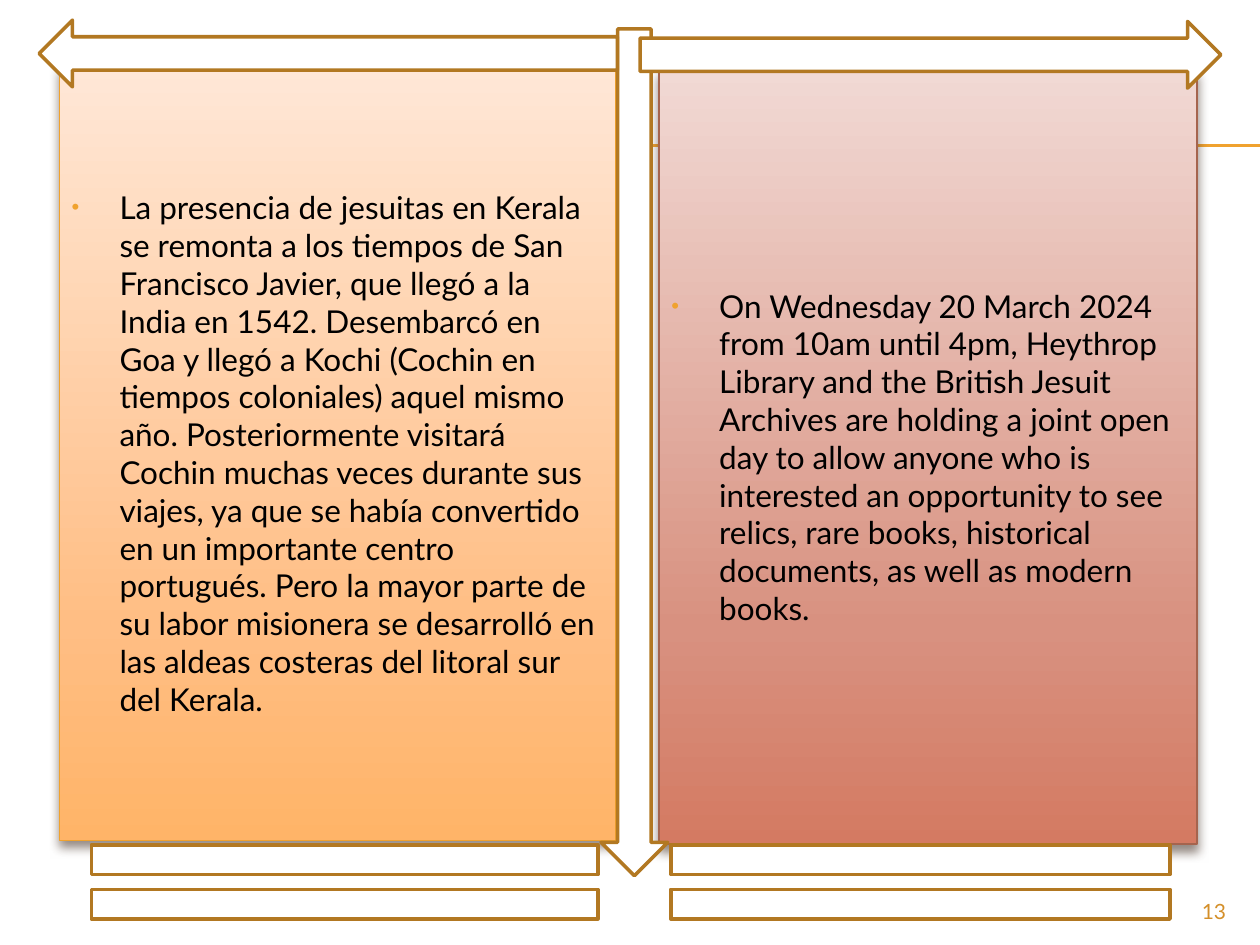
from dataclasses import dataclass

from lxml.etree import SubElement
from pptx import Presentation
from pptx.dml.color import RGBColor
from pptx.enum.shapes import MSO_CONNECTOR, MSO_SHAPE
from pptx.enum.text import MSO_ANCHOR, PP_ALIGN
from pptx.oxml import parse_xml
from pptx.oxml.ns import nsdecls, qn
from pptx.util import Inches, Pt

COLORS = {
    "white": "FFFFFF",
    "black": "000000",
    "gold": "F0A22E",
    "brown": "B27822",
    "rust": "A5644E",
    "shadow": "4E3B30",
    "number": "D48F29",
}
FONT = "Lato"


@dataclass
class Panel:
    left: float
    top: float
    width: float
    height: float
    gradient: tuple[str, str, str]
    line: str
    text: str


@dataclass
class Outline:
    preset: MSO_SHAPE
    left: float
    top: float
    width: float
    height: float


PANELS = [
    Panel(0.47, 0.52, 4.42, 6.15, ("FFE7D7", "FFBE84", "FFB468"), "gold",
          "La presencia de jesuitas en Kerala se remonta a los tiempos de San "
          "Francisco Javier, que llegó a la India en 1542. Desembarcó en Goa y "
          "llegó a Kochi (Cochin en tiempos coloniales) aquel mismo año. "
          "Posteriormente visitará Cochin muchas veces durante sus viajes, ya que "
          "se había convertido en un importante centro portugués. Pero la mayor "
          "parte de su labor misionera se desarrolló en las aldeas costeras del "
          "litoral sur del Kerala."),
    Panel(5.23, 0.55, 4.27, 6.15, ("F1D9D4", "D89180", "D47A62"), "rust",
          "On Wednesday 20 March 2024 from 10am until 4pm, Heythrop Library and "
          "the British Jesuit Archives are holding a joint open day to allow "
          "anyone who is interested an opportunity to see relics, rare books, "
          "historical documents, as well as modern books."),
]
OUTLINES = [
    Outline(MSO_SHAPE.DOWN_ARROW, 4.77, 0.23, 0.53, 6.72),
    Outline(MSO_SHAPE.RIGHT_ARROW, 5.08, 0.17, 4.61, 0.53),
    Outline(MSO_SHAPE.LEFT_ARROW, 0.31, 0.16, 4.59, 0.53),
    Outline(MSO_SHAPE.MATH_EQUAL, 0, 6.5, 5.47, 1),
    Outline(MSO_SHAPE.MATH_EQUAL, 4.61, 6.5, 5.39, 1),
]


def color(name: str) -> RGBColor:
    return RGBColor.from_string(COLORS[name])


def style_font(paragraph, size: float, name: str) -> None:
    for run in paragraph.runs:
        run.font.name = FONT
        run.font.size = Pt(size)
        run.font.color.rgb = color(name)


def add_rule(slide, top: float) -> None:
    rule = slide.shapes.add_connector(
        MSO_CONNECTOR.STRAIGHT, Inches(0.56), Inches(top), Inches(10), Inches(top))
    rule.line.color.rgb = color("gold")
    rule.line.width = Pt(0.75)
    SubElement(rule._element.spPr, qn("a:effectLst"))


def add_gradient(shape, gradient: tuple[str, str, str]) -> None:
    stops = "".join(
        f'<a:gs pos="{position * 1000}"><a:srgbClr val="{value}"/></a:gs>'
        for position, value in zip((0, 72, 100), gradient))
    fill = parse_xml(
        f'<a:gradFill {nsdecls("a")} rotWithShape="1"><a:gsLst>{stops}</a:gsLst>'
        '<a:lin ang="5400000" scaled="0"/></a:gradFill>')
    shape._element.spPr.find(qn("a:prstGeom")).addnext(fill)


def add_shadow(shape) -> None:
    shape._element.spPr.append(parse_xml(
        f'<a:effectLst {nsdecls("a")}><a:outerShdw blurRad="{Pt(6)}" dist="{Pt(4)}" '
        f'dir="5400000" rotWithShape="0"><a:srgbClr val="{COLORS["shadow"]}">'
        '<a:alpha val="60000"/></a:srgbClr></a:outerShdw></a:effectLst>'))


def add_bullet(paragraph) -> None:
    properties = paragraph._p.get_or_add_pPr()
    properties.set("marL", str(Inches(0.38)))
    properties.set("indent", str(-Inches(0.38)))
    bullet_color = SubElement(properties, qn("a:buClr"))
    SubElement(bullet_color, qn("a:srgbClr"), val=COLORS["gold"])
    SubElement(properties, qn("a:buSzPct"), val="70000")
    SubElement(properties, qn("a:buFont"), typeface="Arial")
    SubElement(properties, qn("a:buChar"), char="•")


def add_panel(slide, panel: Panel) -> None:
    shape = slide.shapes.add_shape(
        MSO_SHAPE.RECTANGLE, Inches(panel.left), Inches(panel.top),
        Inches(panel.width), Inches(panel.height))
    add_gradient(shape, panel.gradient)
    shape.line.color.rgb = color(panel.line)
    shape.line.width = Pt(0.79)
    add_shadow(shape)
    text_frame = shape.text_frame
    text_frame.word_wrap = True
    text_frame.vertical_anchor = MSO_ANCHOR.MIDDLE
    text_frame.text = panel.text
    paragraph = text_frame.paragraphs[0]
    paragraph.alignment = PP_ALIGN.LEFT
    add_bullet(paragraph)
    style_font(paragraph, 18, "black")


def add_outline(slide, outline: Outline) -> None:
    shape = slide.shapes.add_shape(
        outline.preset, Inches(outline.left), Inches(outline.top),
        Inches(outline.width), Inches(outline.height))
    shape.shadow.inherit = False
    shape.fill.solid()
    shape.fill.fore_color.rgb = color("white")
    shape.line.color.rgb = color("brown")
    shape.line.width = Pt(2)


def add_slide_number(slide) -> None:
    box = slide.shapes.add_textbox(Inches(9), Inches(7.08), Inches(0.83), Inches(0.27))
    text_frame = box.text_frame
    text_frame.word_wrap = True
    text_frame.text = "13"
    paragraph = text_frame.paragraphs[0]
    paragraph.alignment = PP_ALIGN.RIGHT
    style_font(paragraph, 12, "number")


def main() -> None:
    presentation = Presentation()
    presentation.slide_width = Inches(10)
    presentation.slide_height = Inches(7.5)
    slide = presentation.slides.add_slide(presentation.slide_layouts[6])
    for top in (1.15, 1.16):
        add_rule(slide, top)
    for panel in PANELS:
        add_panel(slide, panel)
    for outline in OUTLINES:
        add_outline(slide, outline)
    add_slide_number(slide)
    presentation.save("out.pptx")


if __name__ == "__main__":
    main()
